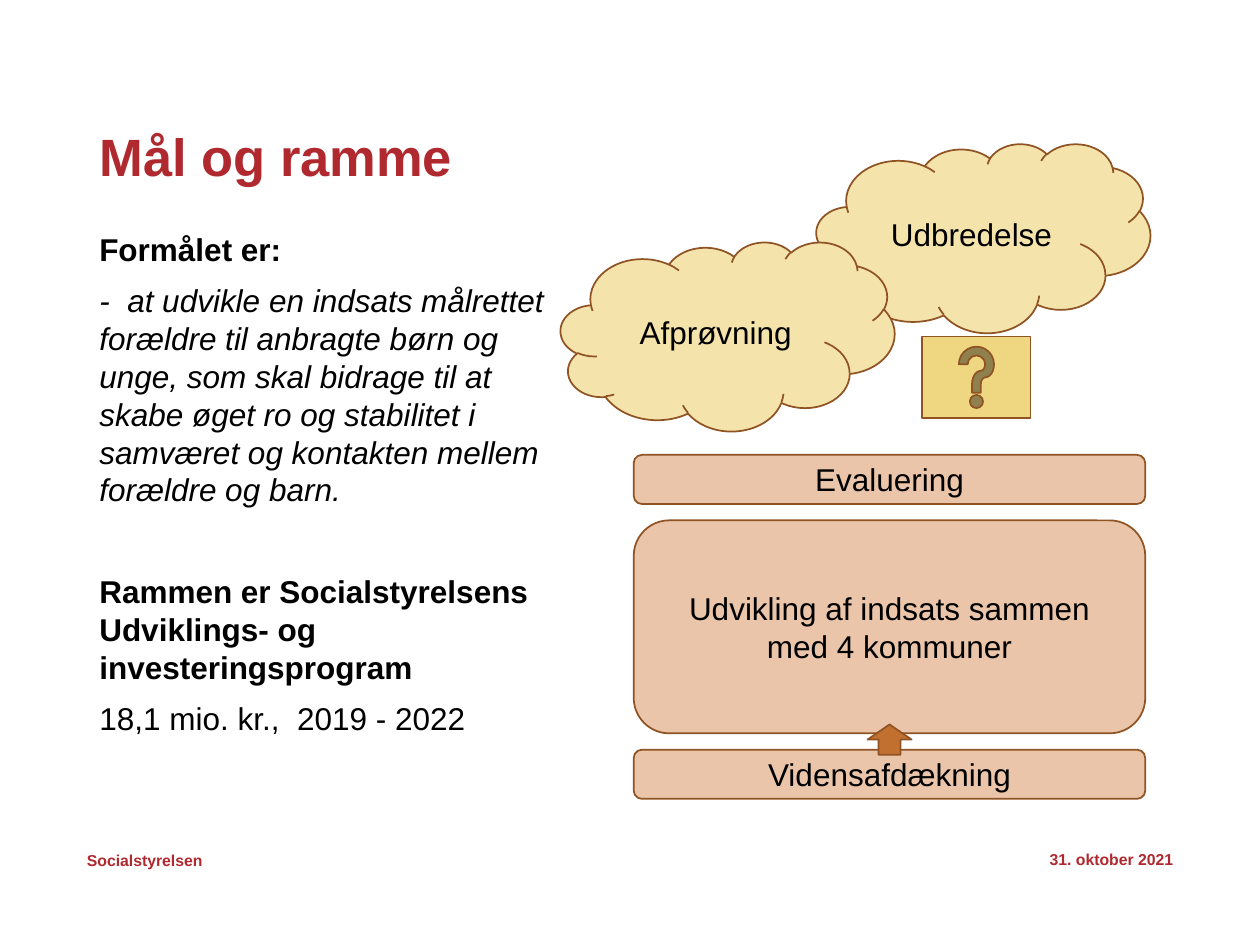
import pptx
import pptx.util
import pptx.dml.color
import pptx.enum.shapes
import pptx.enum.text

Inches, Pt = pptx.util.Inches, pptx.util.Pt
SHAPE = pptx.enum.shapes.MSO_SHAPE
ALIGN = pptx.enum.text.PP_ALIGN
ANCHOR = pptx.enum.text.MSO_ANCHOR
COLORS = {"red": "AF292E", "black": "000000", "cloud": "F4E4AC", "box": "EAC5A9",
          "arrow": "C27030", "help": "EFD782", "line": "905324"}


def rgb(name):
    """Return the named colour."""
    return pptx.dml.color.RGBColor.from_string(COLORS[name])


def write(p, text, color="black", size=18, para=None, **font):
    """Write one run into a paragraph with the given formats."""
    r = p.add_run()
    r.text = text
    r.font.color.rgb = rgb(color)
    for key, value in {"name": "Arial", "size": Pt(size), **font}.items():
        setattr(r.font, key, value)
    for key, value in (para or {}).items():
        setattr(p, key, value)


def set_frame(tf, anchor, inset=None):
    """Set wrapping, anchor and optionally equal insets of a text frame."""
    tf.word_wrap = True
    tf.vertical_anchor = anchor
    if inset is not None:
        for side in ("left", "right", "top", "bottom"):
            setattr(tf, f"margin_{side}", Inches(inset))


def add_figure(slide, kind, box, fill, text=None):
    """Add an outlined preset shape with optional centred text."""
    sp = slide.shapes.add_shape(kind, *map(Inches, box))
    sp.shadow.inherit = False
    sp.fill.solid()
    sp.fill.fore_color.rgb = rgb(fill)
    sp.line.color.rgb = rgb("line")
    sp.line.width = Pt(1)
    if text:
        set_frame(sp.text_frame, ANCHOR.MIDDLE)
        write(sp.text_frame.paragraphs[0], text, para={"alignment": ALIGN.CENTER})


def add_title(slide, box):
    """Place and format the title placeholder."""
    sp = slide.shapes.title
    sp.left, sp.top, sp.width, sp.height = map(Inches, box)
    set_frame(sp.text_frame, ANCHOR.MIDDLE, 0)
    write(sp.text_frame.paragraphs[0], "Mål og ramme", "red", 30, bold=True,
          para={"alignment": ALIGN.LEFT, "line_spacing": 0.9})


def add_body(slide, box):
    """Add the purpose and framework text."""
    tf = slide.shapes.add_textbox(*map(Inches, box)).text_frame
    set_frame(tf, ANCHOR.TOP)
    lines = [
        ("Formålet er:", 7.5, {"bold": True}),
        ("-  at udvikle en indsats målrettet forældre til anbragte børn og unge, "
         "som skal bidrage til at skabe øget ro og stabilitet i samværet og "
         "kontakten mellem forældre og barn.", 7.5, {"italic": True}),
        ("Rammen er Socialstyrelsens Udviklings- og investeringsprogram", 36.5,
         {"bold": True}),
        ("18,1 mio. kr.,  2019 - 2022", 7.5, {}),
    ]
    for i, (text, before, font) in enumerate(lines):
        p = tf.add_paragraph() if i else tf.paragraphs[0]
        write(p, text, para={"space_before": Pt(before)}, **font)


def add_phases(slide, box):
    """Stack the three phase boxes and the arrow between the lowest two."""
    left, top, width, height = box
    bar, gap = 0.39, 0.13
    middle = height - 2 * (bar + gap)
    y = top
    for text, h in (("Evaluering", bar),
                    ("Udvikling af indsats sammen med 4 kommuner", middle),
                    ("Vidensafdækning", bar)):
        add_figure(slide, SHAPE.ROUNDED_RECTANGLE, (left, y, width, h), "box", text)
        y += h + gap
    arrow_w, arrow_h = 0.35, 0.24
    arrow = (left + (width - arrow_w) / 2, top + height - bar - 0.2, arrow_w, arrow_h)
    add_figure(slide, SHAPE.UP_ARROW, arrow, "arrow")


def add_clouds(slide, box):
    """Add the two overlapping clouds and the question mark button."""
    left, top, width, height = box
    w, h = 2.65, 1.5
    add_figure(slide, SHAPE.CLOUD, (left + width - w, top, w, h), "cloud", "Udbredelse")
    add_figure(slide, SHAPE.CLOUD, (left, top + height - h, w, h), "cloud", "Afprøvning")
    add_figure(slide, SHAPE.ACTION_BUTTON_HELP,
               (left + 2.87, top + 1.53, 0.86, 0.65), "help")


def add_footer(slide, text, box, align, anchor):
    """Add one small red footer text."""
    tf = slide.shapes.add_textbox(*map(Inches, box)).text_frame
    set_frame(tf, anchor, 0)
    write(tf.paragraphs[0], text, "red", 9, bold=True, para={"alignment": align})


def main():
    """Build and save the slide."""
    prs = pptx.Presentation()
    prs.slide_width, prs.slide_height = Inches(10), Inches(7.5)
    slide = prs.slides.add_slide(prs.slide_layouts[5])
    add_title(slide, (0.79, 0.85, 8.64, 0.83))
    add_body(slide, (0.69, 1.78, 3.96, 4.65))
    add_phases(slide, (5.03, 3.61, 4.06, 2.73))
    add_clouds(slide, (4.45, 1.14, 4.68, 2.28))
    add_footer(slide, "Socialstyrelsen", (0.69, 6.75, 1.18, 0.15), ALIGN.LEFT, ANCHOR.TOP)
    add_footer(slide, "31. oktober 2021", (7.06, 6.62, 2.25, 0.4), ALIGN.RIGHT,
               ANCHOR.MIDDLE)
    prs.save("out.pptx")


if __name__ == "__main__":
    main()
